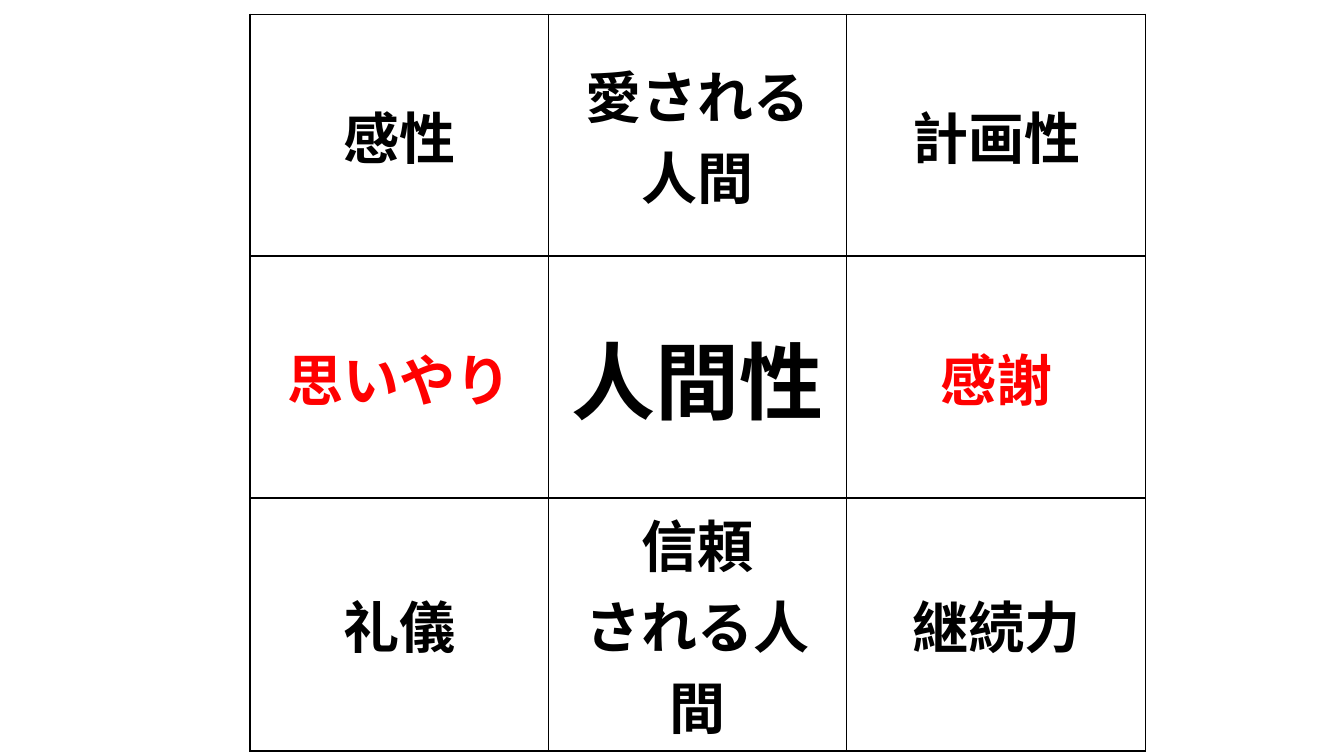
from lxml.etree import SubElement
from pptx import Presentation
from pptx.dml.color import RGBColor
from pptx.enum.text import MSO_ANCHOR, PP_ALIGN
from pptx.oxml.ns import qn
from pptx.util import Inches, Pt


def color(hex_value):
    return RGBColor.from_string(hex_value)


def add_borders(cell, hex_value, points):
    properties = cell._tc.get_or_add_tcPr()
    for side in ("lnL", "lnR", "lnT", "lnB"):
        line = SubElement(properties, qn(f"a:{side}"), w=str(Pt(points)))
        fill = SubElement(line, qn("a:solidFill"))
        SubElement(fill, qn("a:srgbClr"), val=hex_value)


BLACK, RED, WHITE = "000000", "FF0000", "FFFFFF"
traits = [
    [("感性", 40, BLACK), ("愛される\n人間", 40, BLACK), ("計画性", 40, BLACK)],
    [("思いやり", 40, RED), ("人間性", 60, BLACK), ("感謝", 40, RED)],
    [("礼儀", 40, BLACK), ("信頼\nされる人間", 40, BLACK), ("継続力", 40, BLACK)],
]
column_width, row_height = Inches(2.96), Inches(2.4)

deck = Presentation()
deck.slide_width, deck.slide_height = Inches(13.33), Inches(7.5)
slide = deck.slides.add_slide(deck.slide_layouts[6])

mandala = slide.shapes.add_table(
    3, 3, Inches(2.48), Inches(0.14), 3 * column_width, 3 * row_height
).table
mandala.first_row = False
mandala.horz_banding = False

for row, row_traits in enumerate(traits):
    for column, (wording, size, ink) in enumerate(row_traits):
        cell = mandala.cell(row, column)
        add_borders(cell, BLACK, 1)
        cell.fill.solid()
        cell.fill.fore_color.rgb = color(WHITE)
        cell.vertical_anchor = MSO_ANCHOR.MIDDLE
        for index, phrase in enumerate(wording.split("\n")):
            frame = cell.text_frame
            paragraph = frame.add_paragraph() if index else frame.paragraphs[0]
            paragraph.alignment = PP_ALIGN.CENTER
            run = paragraph.add_run()
            run.text = phrase
            run.font.name = "Arial"
            run.font.size = Pt(size)
            run.font.bold = True
            run.font.color.rgb = color(ink)

deck.save("out.pptx")
